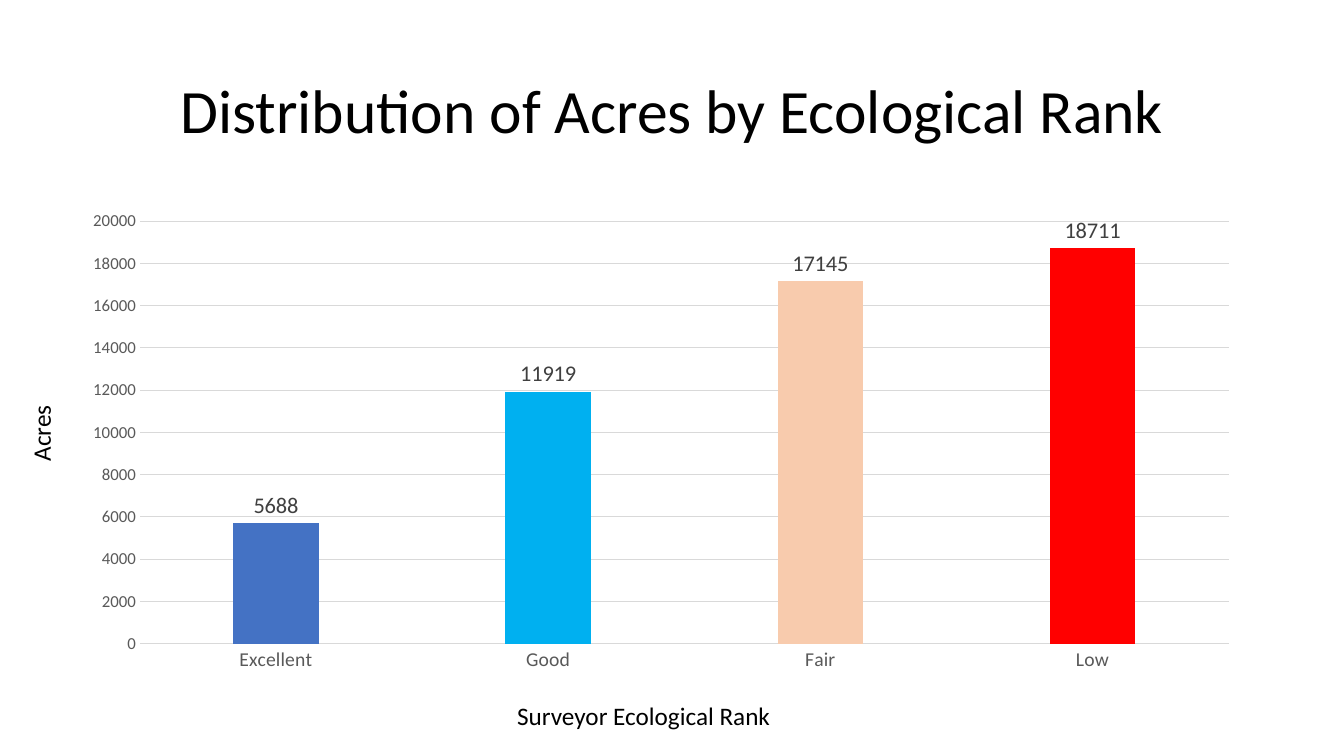
from pptx import Presentation
from pptx.chart.data import CategoryChartData
from pptx.dml.color import RGBColor
from pptx.enum.chart import XL_CHART_TYPE, XL_LABEL_POSITION, XL_TICK_MARK
from pptx.enum.text import MSO_ANCHOR, PP_ALIGN
from pptx.util import Inches, Pt

RANKS = {
    "Excellent": (5688, "4472C4"),
    "Good": (11919, "00B0F0"),
    "Fair": (17145, "F8CBAD"),
    "Low": (18711, "FF0000"),
}


def color(code):
    return RGBColor.from_string(code)


class Deck:
    face = "Calibri"
    ink = "000000"
    gray = "595959"
    rule = "D9D9D9"

    def __init__(self):
        self.prs = Presentation()
        self.prs.slide_width = Inches(13.33)
        self.prs.slide_height = Inches(7.5)
        self.slide = self.prs.slides.add_slide(self.prs.slide_layouts[6])

    def style(self, font, size, code):
        font.name = self.face
        font.size = Pt(size)
        font.color.rgb = color(code)

    def line(self, line):
        line.color.rgb = color(self.rule)
        line.width = Pt(0.75)

    def text(self, words, box, size, align=PP_ALIGN.LEFT,
             anchor=MSO_ANCHOR.TOP, space=1.0, turn=0):
        shape = self.slide.shapes.add_textbox(*map(Inches, box))
        shape.rotation = turn
        frame = shape.text_frame
        frame.word_wrap = True
        frame.vertical_anchor = anchor
        para = frame.paragraphs[0]
        para.alignment = align
        para.line_spacing = space
        run = para.add_run()
        run.text = words
        self.style(run.font, size, self.ink)

    def axis(self, axis, size):
        axis.major_tick_mark = XL_TICK_MARK.NONE
        axis.minor_tick_mark = XL_TICK_MARK.NONE
        self.style(axis.tick_labels.font, size, self.gray)

    def bars(self, ranks, box):
        data = CategoryChartData(number_format="0")
        data.categories = list(ranks)
        data.add_series("Acres", [acres for acres, _ in ranks.values()])
        chart = self.slide.shapes.add_chart(
            XL_CHART_TYPE.COLUMN_CLUSTERED, *map(Inches, box), data).chart
        chart.has_legend = False
        chart.has_title = False
        self.style(chart.font, 10, self.ink)

        # Axes
        self.axis(chart.category_axis, 14)
        self.line(chart.category_axis.format.line)
        scale = chart.value_axis
        self.axis(scale, 12)
        scale.minimum_scale, scale.maximum_scale = 0, 20000
        scale.major_unit = 2000
        scale.format.line.fill.background()
        self.line(scale.major_gridlines.format.line)

        # Columns, one color per rank
        plot = chart.plots[0]
        plot.gap_width = 219
        plot.overlap = -27
        plot.vary_by_categories = False
        for i, (_, code) in enumerate(ranks.values()):
            fill = plot.series[0].points[i].format.fill
            fill.solid()
            fill.fore_color.rgb = color(code)

        # Value labels
        plot.has_data_labels = True
        labels = plot.data_labels
        labels.show_value = True
        labels.position = XL_LABEL_POSITION.OUTSIDE_END
        self.style(labels.font, 16, "404040")


def main():
    deck = Deck()
    # Title
    deck.text("Distribution of Acres by Ecological Rank",
              (0.92, 0.4, 11.5, 1.45), 44, PP_ALIGN.CENTER,
              MSO_ANCHOR.MIDDLE, 0.9)
    # Chart and axis captions
    deck.bars(RANKS, (0.69, 2, 11.73, 4.76))
    deck.text("Acres", (0, 4.07, 0.81, 0.4), 18, turn=270)
    deck.text("Surveyor Ecological Rank", (5.03, 6.9, 3.65, 0.4), 18)
    deck.prs.save("out.pptx")


if __name__ == "__main__":
    main()
